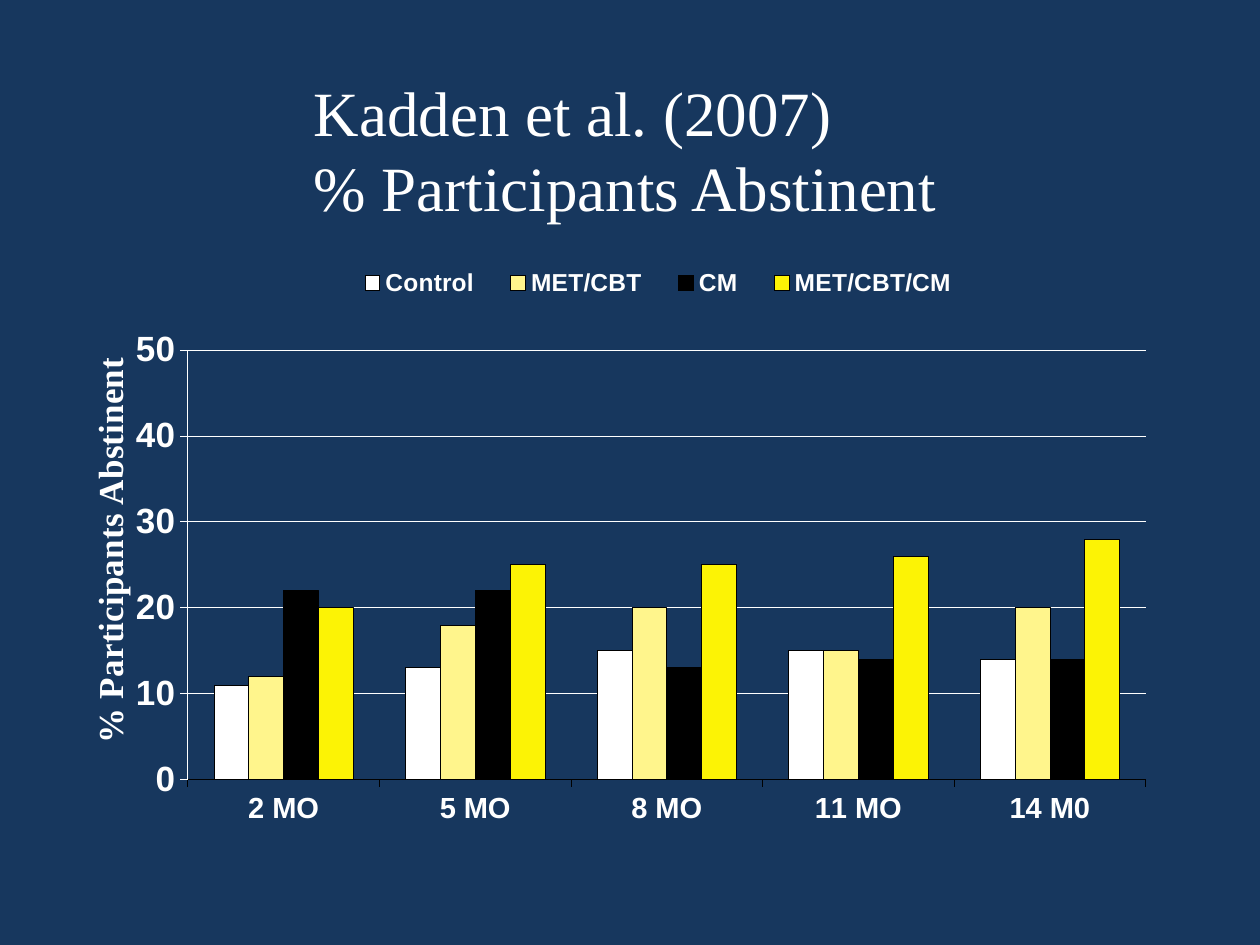
import pptx
import pptx.chart.data
import pptx.dml.color
import pptx.enum.chart
import pptx.enum.text
import pptx.oxml
import pptx.oxml.ns
import pptx.util
from pptx.util import Inches

COLORS = {
    "background": "17375E",
    "text": "FFFFFF",
    "outline": "000000",
    "Control": "FFFFFF",
    "MET/CBT": "FFF58C",
    "CM": "000000",
    "MET/CBT/CM": "FCF305",
}
MONTHS = ["2 MO", "5 MO", "8 MO", "11 MO", "14 M0"]
ABSTINENT = {
    "Control": [11, 13, 15, 15, 14],
    "MET/CBT": [12, 18, 20, 15, 20],
    "CM": [22, 22, 13, 14, 14],
    "MET/CBT/CM": [20, 25, 25, 26, 28],
}


def color(name):
    return pptx.dml.color.RGBColor.from_string(COLORS[name])


def style_font(font, size, face="Arial", bold=True):
    font.name = face
    font.size = pptx.util.Pt(size)
    font.bold = bold
    font.color.rgb = color("text")


def style_line(line, name):
    line.color.rgb = color(name)
    line.width = pptx.util.Pt(0.25)


def chart_layout(target=None, **fractions):
    """Return a manual layout; fractions are of the chart's width and height."""
    inner = '<c:layoutTarget val="inner"/>' if target else ""
    modes = "".join(f'<c:{key}Mode val="edge"/>' for key in ("x", "y"))
    values = "".join(f'<c:{key} val="{value}"/>' for key, value in fractions.items())
    return pptx.oxml.parse_xml(
        f'<c:layout {pptx.oxml.ns.nsdecls("c")}><c:manualLayout>'
        f"{inner}{modes}{values}</c:manualLayout></c:layout>"
    )


def place(part, layout):
    """Give a chart part its layout in place of any it has."""
    qn = pptx.oxml.ns.qn
    for old in part.findall(qn("c:layout")):
        part.remove(old)
    overlay = part.find(qn("c:overlay"))
    if overlay is None:
        part.insert(0, layout)
    else:
        overlay.addprevious(layout)


def add_heading(slide, left, top, width, height):
    heading = slide.shapes.title
    heading.left, heading.top, heading.width, heading.height = left, top, width, height
    frame = heading.text_frame
    frame.text = "Kadden et al. (2007)\n% Participants Abstinent"
    frame.word_wrap = False
    frame.auto_size = pptx.enum.text.MSO_AUTO_SIZE.SHAPE_TO_FIT_TEXT
    frame.vertical_anchor = pptx.enum.text.MSO_ANCHOR.TOP
    for paragraph in frame.paragraphs:
        paragraph.alignment = pptx.enum.text.PP_ALIGN.LEFT
        for run in paragraph.runs:
            style_font(run.font, 36, "Times New Roman", bold=False)


def style_axes(chart):
    months, percent = chart.category_axis, chart.value_axis
    for axis, size, line in ((months, 16.6, "outline"), (percent, 20, "text")):
        style_font(axis.tick_labels.font, size)
        style_line(axis.format.line, line)
        axis.major_tick_mark = pptx.enum.chart.XL_TICK_MARK.OUTSIDE
        axis.minor_tick_mark = pptx.enum.chart.XL_TICK_MARK.NONE
    percent.minimum_scale, percent.maximum_scale, percent.major_unit = 0, 50, 10
    percent.has_major_gridlines = True
    style_line(percent.major_gridlines.format.line, "text")

    caption = percent.axis_title.text_frame
    caption.text = "% Participants Abstinent"
    style_font(caption.paragraphs[0].runs[0].font, 20, "Times New Roman")
    body = caption._txBody.find(pptx.oxml.ns.qn("a:bodyPr"))
    body.set("rot", "-5400000")
    body.set("vert", "horz")
    place(percent.axis_title._element, chart_layout(x=0.03, y=0.16))


def add_abstinence_chart(slide, left, top, width, height):
    data = pptx.chart.data.CategoryChartData()
    data.categories = MONTHS
    for treatment, values in ABSTINENT.items():
        data.add_series(treatment, values)
    chart = slide.shapes.add_chart(
        pptx.enum.chart.XL_CHART_TYPE.COLUMN_CLUSTERED, left, top, width, height, data
    ).chart
    chart.has_title = False
    style_font(chart.font, 16.6)

    plot = chart.plots[0]
    plot.gap_width, plot.overlap = 150, 0
    plot.vary_by_categories = False
    for treatment in plot.series:
        treatment.format.fill.solid()
        treatment.format.fill.fore_color.rgb = color(treatment.name)
        style_line(treatment.format.line, "outline")
    style_axes(chart)

    chart.has_legend = True
    legend = chart.legend
    legend.position = pptx.enum.chart.XL_LEGEND_POSITION.TOP
    legend.include_in_layout = False
    style_font(legend.font, 14)
    place(legend._element, chart_layout(x=0.26, y=0.02, w=0.58, h=0.06))
    plot_area = chart._chartSpace.chart.plotArea
    place(plot_area, chart_layout("inner", x=0.126, y=0.158, w=0.863, h=0.693))


def build_slide(presentation):
    slide = presentation.slides.add_slide(presentation.slide_layouts[5])
    slide.background.fill.solid()
    slide.background.fill.fore_color.rgb = color("background")
    add_abstinence_chart(slide, Inches(0.38), Inches(2), Inches(8.81), Inches(4.92))
    add_heading(slide, Inches(2.39), Inches(0.53), Inches(5.17), Inches(1.3))


def main():
    presentation = pptx.Presentation()
    presentation.slide_width, presentation.slide_height = Inches(10), Inches(7.5)
    build_slide(presentation)
    presentation.save("out.pptx")


if __name__ == "__main__":
    main()
